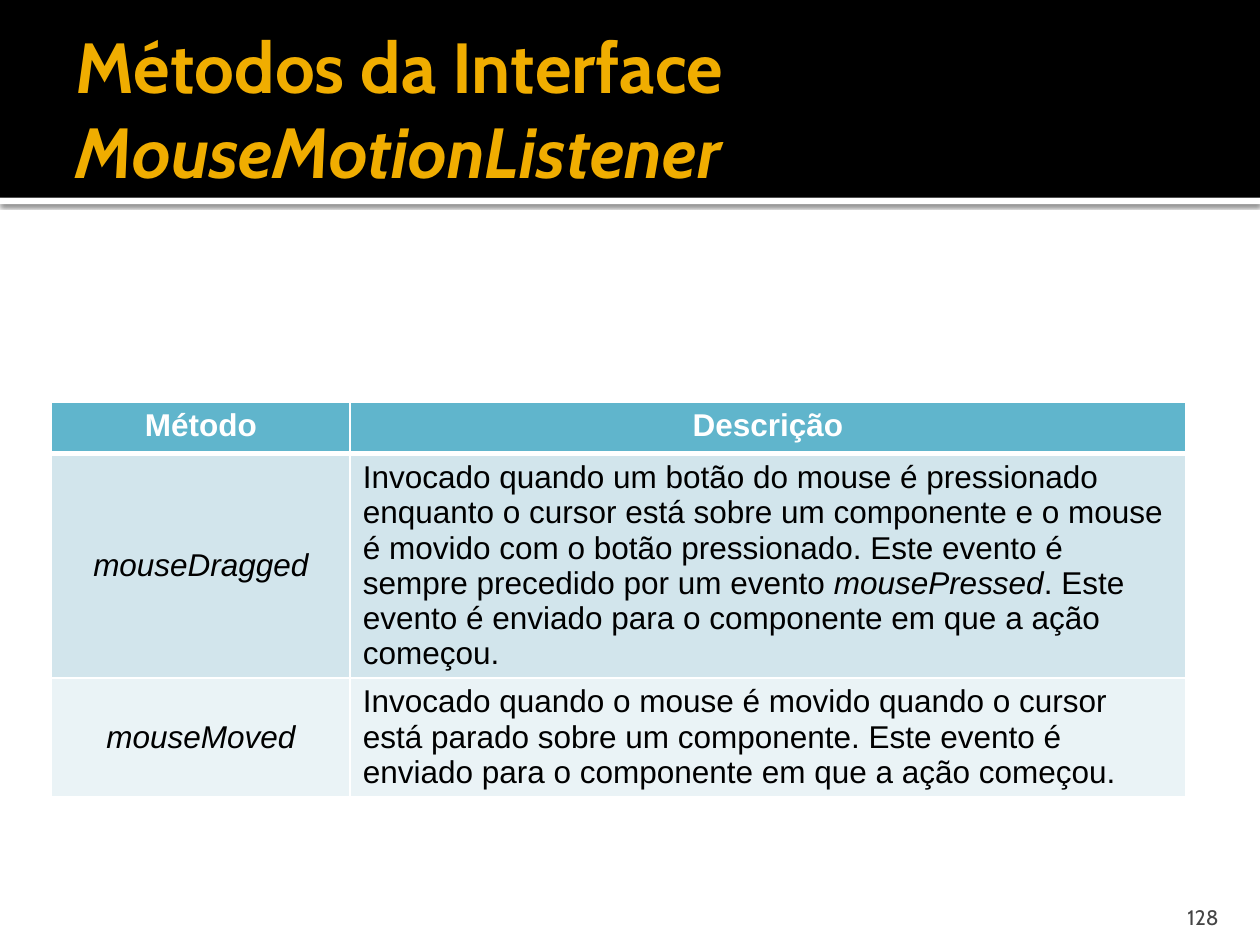
from pptx import Presentation
from pptx import util as u
from pptx.dml.color import RGBColor
from pptx.enum import shapes, text
from pptx.oxml import parse_xml
from pptx.oxml.ns import nsdecls


def color(value):
    return RGBColor.from_string(value)


class SlideBuilder:
    """Holds the style and the current slide."""

    heading_font = "Cabin"
    body_font = "Arial"
    accent = "F0AD00"
    row_fills = ["60B5CC", "D2E5EC", "EAF3F6"]

    def __init__(self, presentation):
        self.slide = presentation.slides.add_slide(presentation.slide_layouts[5])

    def place(self, shape, left, top, width, height):
        shape.left, shape.top = u.Inches(left), u.Inches(top)
        shape.width, shape.height = u.Inches(width), u.Inches(height)

    def format_paragraph(self, paragraph, font, size, fill, align, bold=False):
        paragraph.alignment = align
        paragraph.font.name = font
        paragraph.font.size = u.Pt(size)
        paragraph.font.bold = bold
        paragraph.font.color.rgb = color(fill)

    def add_runs(self, paragraph, runs):
        for content, italic in runs:
            run = paragraph.add_run()
            run.text = content
            run.font.italic = italic

    def band(self, top, height, fill, shadow=False):
        shape = self.slide.shapes.add_shape(
            shapes.MSO_SHAPE.RECTANGLE, 0, u.Inches(top), u.Inches(10), u.Inches(height))
        shape.shadow.inherit = False
        shape.fill.solid()
        shape.fill.fore_color.rgb = color(fill)
        shape.line.fill.background()
        if shadow:
            shape.element.spPr.find("{*}effectLst").append(parse_xml(
                f'<a:outerShdw {nsdecls("a")} blurRad="{u.Pt(2.5)}" dist="{u.Pt(0.8)}" '
                'dir="5400000" rotWithShape="0"><a:srgbClr val="000000">'
                '<a:alpha val="60000"/></a:srgbClr></a:outerShdw>'))

    def title(self, runs):
        title = self.slide.shapes.title
        self.slide.shapes.element.append(title.element)
        self.place(title, 0.5, 0.17, 8.63, 1.37)
        frame = title.text_frame
        frame.auto_size = text.MSO_AUTO_SIZE.NONE
        frame.word_wrap = True
        frame.vertical_anchor = text.MSO_ANCHOR.MIDDLE
        frame.margin_left = u.Inches(0.1)
        frame.margin_right = frame.margin_top = frame.margin_bottom = u.Inches(0.05)
        paragraph = frame.paragraphs[0]
        self.add_runs(paragraph, runs)
        self.format_paragraph(
            paragraph, self.heading_font, 40.5, self.accent, text.PP_ALIGN.LEFT, True)

    def borders(self, cell, row):
        widths = {"L": 1, "R": 1, "T": 3 if row == 1 else 1, "B": 3 if row == 0 else 1}
        properties = cell._tc.get_or_add_tcPr()
        for index, (side, width) in enumerate(widths.items()):
            properties.insert(index, parse_xml(
                f'<a:ln{side} {nsdecls("a")} w="{u.Pt(width)}"><a:solidFill>'
                f'<a:srgbClr val="FFFFFF"/></a:solidFill></a:ln{side}>'))

    def table(self, rows, widths, heights):
        table = self.slide.shapes.add_table(
            len(rows), len(widths), u.Inches(0.41), u.Inches(3.19),
            u.Inches(sum(widths)), u.Inches(sum(heights))).table
        for column, width in zip(table.columns, widths):
            column.width = u.Inches(width)
        for row, (contents, height) in enumerate(zip(rows, heights)):
            table.rows[row].height = u.Inches(height)
            for column, runs in enumerate(contents):
                header = row == 0
                cell = table.cell(row, column)
                cell.fill.solid()
                cell.fill.fore_color.rgb = color(self.row_fills[row])
                cell.vertical_anchor = text.MSO_ANCHOR.TOP if header else text.MSO_ANCHOR.MIDDLE
                centered = header or column == 0
                paragraph = cell.text_frame.paragraphs[0]
                self.add_runs(paragraph, runs)
                self.format_paragraph(
                    paragraph, self.body_font, 18, "FFFFFF" if header else "000000",
                    text.PP_ALIGN.CENTER if centered else text.PP_ALIGN.LEFT, header)
                self.borders(cell, row)

    def page_number(self, number):
        box = self.slide.shapes.add_textbox(0, 0, 0, 0)
        self.place(box, 8.97, 7.08, 0.8, 0.3)
        frame = box.text_frame
        frame.word_wrap = True
        frame.vertical_anchor = text.MSO_ANCHOR.BOTTOM
        frame.margin_bottom = 0
        paragraph = frame.paragraphs[0]
        self.add_runs(paragraph, [(number, False)])
        self.format_paragraph(
            paragraph, self.heading_font, 12, "454545", text.PP_ALIGN.RIGHT)


def main():
    presentation = Presentation()
    presentation.slide_width, presentation.slide_height = u.Inches(10), u.Inches(7.5)
    builder = SlideBuilder(presentation)
    builder.band(1.57, 0.05, "FFFFFF", shadow=True)
    builder.band(0, 1.57, "000000")
    builder.title([("Métodos da Interface ", False), ("MouseMotionListener", True)])
    rows = [
        [[("Método", False)], [("Descrição", False)]],
        [[("mouseDragged", True)],
         [("Invocado quando um botão do mouse é pressionado enquanto o cursor está sobre um "
           "componente e o mouse é movido com o botão pressionado. Este evento é sempre "
           "precedido por um evento ", False),
          ("mousePressed", True),
          (". Este evento é enviado para o componente em que a ação começou.", False)]],
        [[("mouseMoved", True)],
         [("Invocado quando o mouse é movido quando o cursor está parado sobre um componente. "
           "Este evento é enviado para o componente em que a ação começou.", False)]],
    ]
    builder.table(rows, widths=[2.37, 6.63], heights=[0.41, 1.77, 0.93])
    builder.page_number("128")
    presentation.save("out.pptx")


if __name__ == "__main__":
    main()
